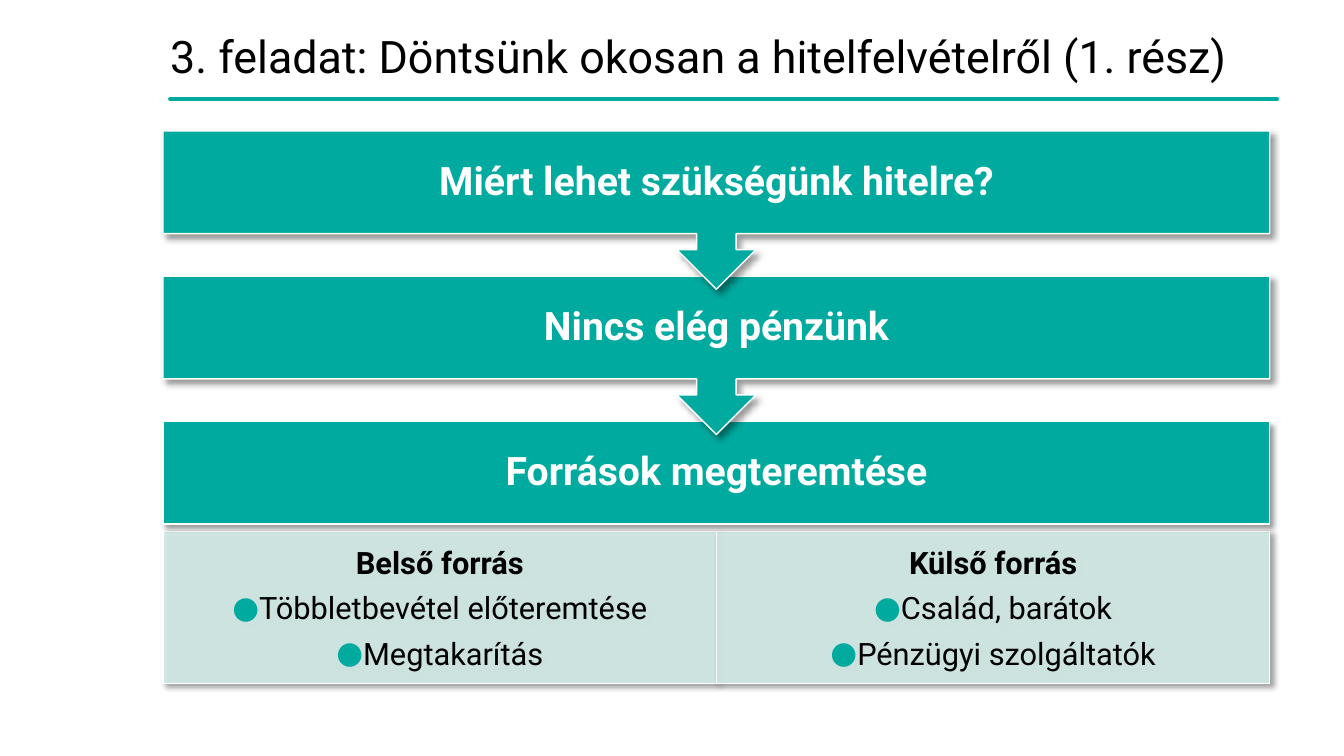
from lxml.etree import SubElement
from pptx import Presentation
from pptx.dml.color import RGBColor
from pptx.enum.shapes import MSO_CONNECTOR as Connector, MSO_SHAPE as Shape
from pptx.enum.text import MSO_ANCHOR as Anchor, MSO_AUTO_SIZE as AutoSize, PP_ALIGN as Align
from pptx.oxml.ns import qn
from pptx.util import Cm, Pt

TITLE = "3. feladat: Döntsünk okosan a hitelfelvételről (1. rész)"
STEPS = ["Miért lehet szükségünk hitelre?", "Nincs elég pénzünk", "Források megteremtése"]
SOURCES = [
    ("Belső forrás", ["Többletbevétel előteremtése", "Megtakarítás"]),
    ("Külső forrás", ["Család, barátok", "Pénzügyi szolgáltatók"]),
]
COLORS = {"teal": "00AA9F", "pale": "D1EAE6", "white": "FFFFFF", "black": "000000"}
FONT = "Roboto"

TITLE_LEFT, TITLE_TOP, TITLE_HEIGHT = 4.29, 0.84, 1.3
RULE_TOP = 2.49
LEFT, TOP, WIDTH = 4.11, 3.3, 27.89
STEP_PITCH, STEP_HEIGHT, CALLOUT_HEIGHT = 3.66, 2.59, 3.99
SOURCE_TOP, SOURCE_HEIGHT = 13.39, 3.84
ARROW_RATIO = 0.25


def rgb(name):
    return RGBColor.from_string(COLORS[name])


def add_run(paragraph, text, size, color, bold=False):
    run = paragraph.add_run()
    run.text = text
    run.font.name = FONT
    run.font.size = Pt(size)
    run.font.bold = bold
    run.font.color.rgb = rgb(color)


def set_frame(frame, horizontal=0, vertical=0):
    frame.word_wrap = True
    frame.auto_size = AutoSize.NONE
    frame.vertical_anchor = Anchor.MIDDLE
    frame.margin_left = frame.margin_right = Cm(horizontal)
    frame.margin_top = frame.margin_bottom = Cm(vertical)


def add_shadow(shape):
    shape.shadow.inherit = False
    effects = shape._element.spPr.find(qn("a:effectLst"))
    shadow = SubElement(effects, qn("a:outerShdw"), blurRad=str(Pt(4)), dist=str(Pt(3)),
                        dir="2700000", algn="tl", rotWithShape="0")
    color = SubElement(shadow, qn("a:srgbClr"), val=COLORS["black"])
    SubElement(color, qn("a:alpha"), val="40000")


def add_block(slide, kind, left, top, width, height, fill):
    shape = slide.shapes.add_shape(kind, Cm(left), Cm(top), Cm(width), Cm(height))
    shape.fill.solid()
    shape.fill.fore_color.rgb = rgb(fill)
    shape.line.color.rgb = rgb("white")
    shape.line.width = Pt(1)
    add_shadow(shape)
    return shape


def add_bullet(paragraph):
    properties = paragraph._p.get_or_add_pPr()
    properties.set("marL", str(Cm(0.61)))
    properties.set("indent", str(-Cm(0.61)))
    color = SubElement(properties, qn("a:buClr"))
    SubElement(color, qn("a:srgbClr"), val=COLORS["teal"])
    SubElement(properties, qn("a:buFont"), typeface=FONT)
    SubElement(properties, qn("a:buChar"), char="●")


def add_title(slide):
    title = slide.shapes.title
    title.left, title.top = Cm(TITLE_LEFT), Cm(TITLE_TOP)
    title.width, title.height = Cm(WIDTH), Cm(TITLE_HEIGHT)
    set_frame(title.text_frame)
    paragraph = title.text_frame.paragraphs[0]
    paragraph.alignment = Align.LEFT
    paragraph.line_spacing = 0.9
    add_run(paragraph, TITLE, 32, "black")

    rule = slide.shapes.add_connector(Connector.STRAIGHT, Cm(TITLE_LEFT), Cm(RULE_TOP),
                                      Cm(TITLE_LEFT + WIDTH), Cm(RULE_TOP))
    rule.line.color.rgb = rgb("teal")
    rule.line.width = Pt(3)
    rule.line._get_or_add_ln().set("cap", "rnd")
    SubElement(rule._element.spPr, qn("a:effectLst"))


def add_step(slide, index, text):
    last = index == len(STEPS) - 1
    kind = Shape.RECTANGLE if last else Shape.DOWN_ARROW_CALLOUT
    height = STEP_HEIGHT if last else CALLOUT_HEIGHT
    step = add_block(slide, kind, LEFT, TOP + index * STEP_PITCH, WIDTH, height, "teal")
    if not last:
        for position in range(3):
            step.adjustments[position] = ARROW_RATIO
        step.adjustments[3] = STEP_HEIGHT / CALLOUT_HEIGHT
    set_frame(step.text_frame)
    paragraph = step.text_frame.paragraphs[0]
    paragraph.alignment = Align.CENTER
    paragraph.line_spacing = 0.9
    add_run(paragraph, text, 28, "white", True)


def add_source(slide, index, heading, items):
    width = WIDTH / len(SOURCES)
    source = add_block(slide, Shape.RECTANGLE, LEFT + index * width, SOURCE_TOP,
                       width, SOURCE_HEIGHT, "pale")
    fill_color = source._element.spPr.find(qn("a:solidFill"))[0]
    SubElement(fill_color, qn("a:alpha"), val="90000")
    frame = source.text_frame
    set_frame(frame, 0.43, 0.08)
    paragraph = frame.paragraphs[0]
    paragraph.alignment = Align.CENTER
    add_run(paragraph, heading, 22, "black", True)
    for item in items:
        paragraph = frame.add_paragraph()
        add_bullet(paragraph)
        paragraph.alignment = Align.CENTER
        paragraph.space_before = Pt(6)
        add_run(paragraph, item, 22, "black")


def main():
    presentation = Presentation()
    presentation.slide_width, presentation.slide_height = Cm(33.87), Cm(19.05)
    slide = presentation.slides.add_slide(presentation.slide_layouts[5])
    add_title(slide)
    for index, (heading, items) in enumerate(SOURCES):
        add_source(slide, index, heading, items)
    for index, text in reversed(list(enumerate(STEPS))):
        add_step(slide, index, text)
    presentation.save("out.pptx")


if __name__ == "__main__":
    main()
